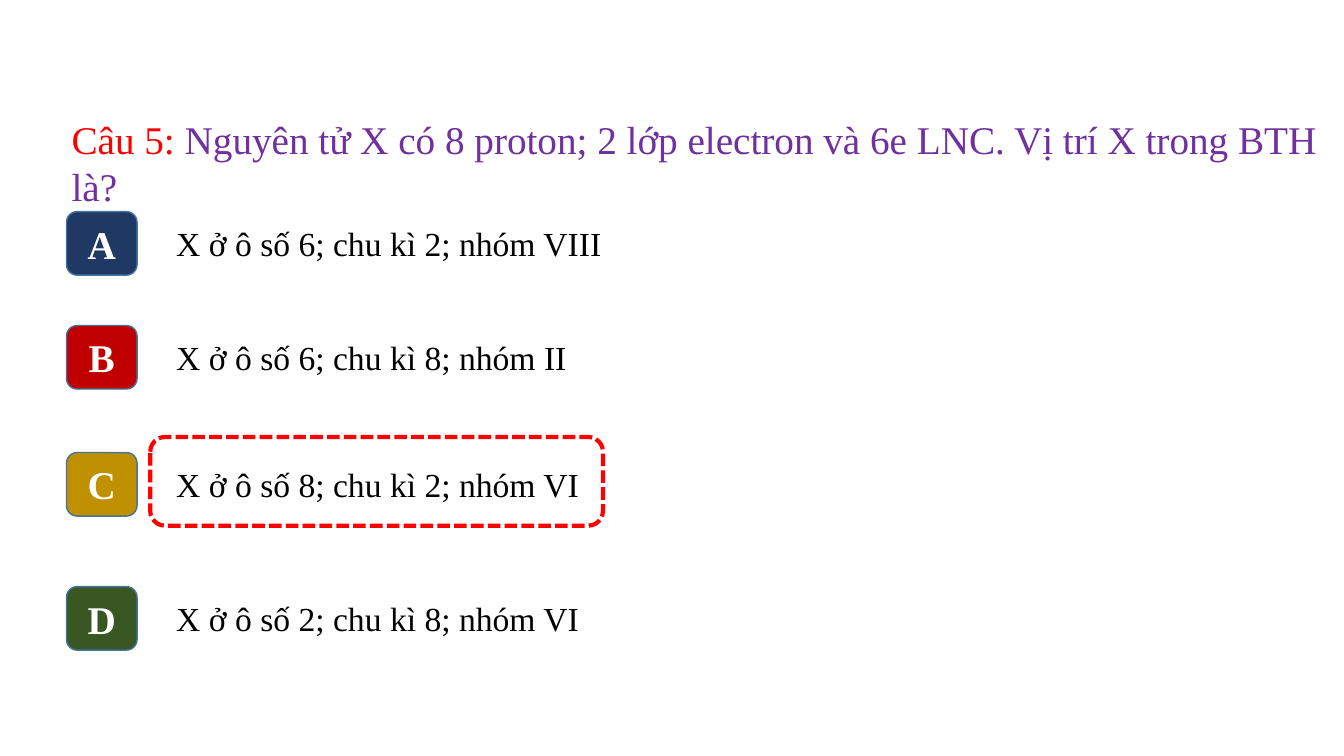
"""Build a multiple-choice chemistry question slide with the correct answer outlined."""
from pptx import Presentation
from pptx.dml.color import RGBColor
from pptx.enum.dml import MSO_LINE
from pptx.enum.shapes import MSO_SHAPE
from pptx.enum.text import MSO_ANCHOR, MSO_AUTO_SIZE, PP_ALIGN
from pptx.util import Inches, Pt

QUESTION = [
    ("Câu 5: ", "red"),
    ("Nguyên tử X có 8 proton; 2 lớp electron và 6e LNC. Vị trí X trong BTH là?", "purple"),
]
ANSWERS = [
    ("A", "X ở ô số 6; chu kì 2; nhóm VIII", "navy", 2.1),
    ("B", "X ở ô số 6; chu kì 8; nhóm II", "crimson", 3.23),
    ("C", "X ở ô số 8; chu kì 2; nhóm VI", "gold", 4.49),
    ("D", "X ở ô số 2; chu kì 8; nhóm VI", "green", 5.82),
]
CORRECT = "C"
COLORS = {
    "red": "FF0000", "purple": "7030A0", "navy": "203864", "crimson": "C00000",
    "gold": "BF9000", "green": "385723", "edge": "43739E",
    "white": "FFFFFF", "black": "000000",
}
FONT = "Times New Roman"
BADGE_LEFT, BADGE_WIDTH, BADGE_HEIGHT = 0.66, 0.7, 0.63
ANSWER_LEFT, ANSWER_WIDTH, ANSWER_HEIGHT = 1.65, 6.56, 0.5
FRAME_LEFT, FRAME_WIDTH, FRAME_HEIGHT = 1.49, 4.49, 0.88


def color(name):
    return RGBColor.from_string(COLORS[name])


def write(frame, runs, size, bold=False, align=PP_ALIGN.LEFT, anchor=MSO_ANCHOR.TOP):
    frame.word_wrap = True
    frame.auto_size = MSO_AUTO_SIZE.NONE
    frame.vertical_anchor = anchor
    paragraph = frame.paragraphs[0]
    paragraph.alignment = align
    for text, name in runs:
        run = paragraph.add_run()
        run.text = text
        run.font.name = FONT
        run.font.size = Pt(size)
        run.font.bold = bold
        run.font.color.rgb = color(name)


def add_rounded(slide, box, line, width, fill=None):
    shape = slide.shapes.add_shape(MSO_SHAPE.ROUNDED_RECTANGLE, *map(Inches, box))
    shape.shadow.inherit = False
    if fill:
        shape.fill.solid()
        shape.fill.fore_color.rgb = color(fill)
    else:
        shape.fill.background()
    shape.line.color.rgb = color(line)
    shape.line.width = Pt(width)
    return shape


def add_answer(slide, letter, text, fill, top):
    middle = top + BADGE_HEIGHT / 2
    badge = add_rounded(slide, (BADGE_LEFT, top, BADGE_WIDTH, BADGE_HEIGHT), "edge", 1, fill)
    write(badge.text_frame, [(letter, "white")], 28, bold=True,
          align=PP_ALIGN.CENTER, anchor=MSO_ANCHOR.MIDDLE)
    box = (ANSWER_LEFT, middle - ANSWER_HEIGHT / 2, ANSWER_WIDTH, ANSWER_HEIGHT)
    answer = slide.shapes.add_textbox(*map(Inches, box))
    write(answer.text_frame, [(text, "black")], 24)
    if letter == CORRECT:
        box = (FRAME_LEFT, middle - FRAME_HEIGHT / 2 - 0.03, FRAME_WIDTH, FRAME_HEIGHT)
        frame = add_rounded(slide, box, "red", 3)
        frame.line.dash_style = MSO_LINE.SQUARE_DOT


def main():
    presentation = Presentation()
    presentation.slide_width, presentation.slide_height = Inches(13.33), Inches(7.5)
    slide = presentation.slides.add_slide(presentation.slide_layouts[5])
    title = slide.shapes.title
    title.left, title.top = Inches(0.61), Inches(1.09)
    title.width, title.height = Inches(12.73), Inches(1.04)
    write(title.text_frame, QUESTION, 28)
    for answer in ANSWERS:
        add_answer(slide, *answer)
    presentation.save("out.pptx")


if __name__ == "__main__":
    main()
